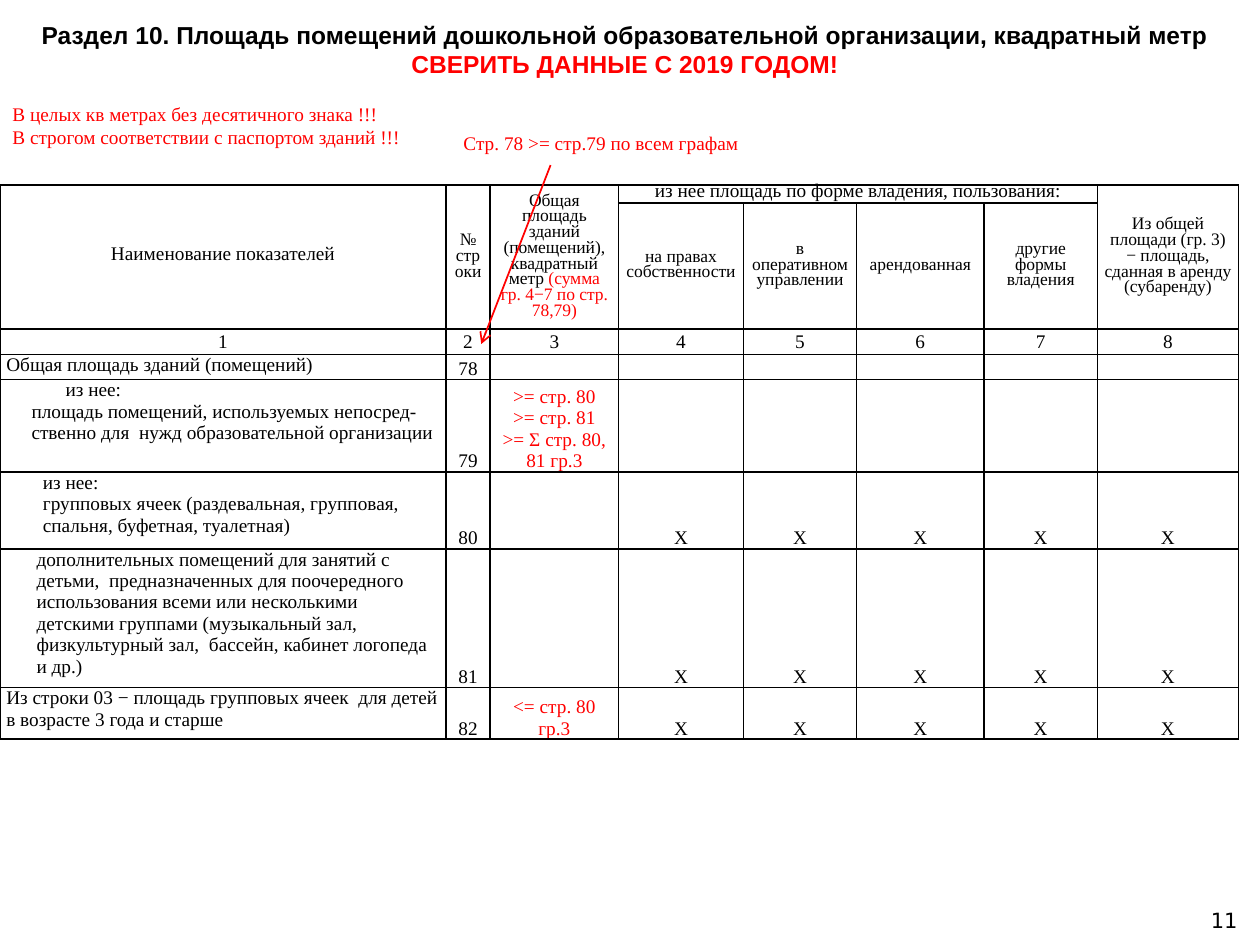
from lxml import etree
from pptx import Presentation, util as u
from pptx.dml.color import RGBColor
from pptx.enum import shapes, text
from pptx.oxml.ns import qn

WIDTH, HEIGHT = 10, 7.5
SERIF, BLACK, RED = "Times New Roman", "000000", "FF0000"
LEFT, CENTER, RIGHT = text.PP_ALIGN.LEFT, text.PP_ALIGN.CENTER, text.PP_ALIGN.RIGHT
TOP, MIDDLE, BOTTOM = (text.MSO_ANCHOR.TOP, text.MSO_ANCHOR.MIDDLE,
                       text.MSO_ANCHOR.BOTTOM)

COLUMNS = [3.54, 0.35, 1.02, 0.99, 0.9, 1.01, 0.9, 1.12]
ROWS = [0.14, 0.83, 0.2, 0.2, 0.61, 0.61, 1.02, 0.41]
# (row, column, rows spanned, columns spanned, size, black text, red text)
HEADINGS = [
    (0, 0, 2, 1, 11, "Наименование показателей", ""),
    (0, 1, 2, 1, 10, "№\vстроки", ""),
    (0, 2, 2, 1, 10, "Общая площадь зданий (помещений), квадратный метр ",
     "(сумма\vгр. 4−7 по стр. 78,79)"),
    (0, 3, 1, 4, 11, "из нее площадь по форме владения, пользования:", ""),
    (0, 7, 2, 1, 10,
     "Из общей площади (гр. 3) − площадь, сданная в аренду (субаренду)", ""),
    (1, 3, 1, 1, 10, "на правах собственности", ""),
    (1, 4, 1, 1, 10, "в оперативном управлении", ""),
    (1, 5, 1, 1, 10, "арендованная", ""),
    (1, 6, 1, 1, 10, "другие формы владения", ""),
]
# (name, left margin, first-line indent, line number, check, mark in columns 4-8)
INDICATORS = [
    (["Общая площадь зданий (помещений)"], 0, 0, "78", [""], ""),
    (["из нее:", "площадь помещений, используемых непосред-\vственно для  нужд "
      "образовательной организации"], 0.2, 0.27, "79",
     [">= стр. 80", ">= стр. 81", ">= Σ стр. 80, 81 гр.3"], ""),
    (["из нее:\vгрупповых ячеек (раздевальная, групповая, спальня, буфетная, "
      "туалетная)"], 0.29, 0, "80", [""], "Х"),
    (["дополнительных помещений для занятий с детьми,  предназначенных для "
      "поочередного использования всеми или несколькими детскими группами "
      "(музыкальный зал, физкультурный зал,  бассейн, кабинет логопеда и др.)"],
     0.24, 0, "81", [""], "Х"),
    (["Из строки 03 − площадь групповых ячеек  для детей в возрасте 3 года и "
      "старше"], 0, 0, "82", ["<= стр. 80 гр.3"], "Х"),
]


def color(value):
    return RGBColor.from_string(value)


def write(frame, lines, size=11, ink=BLACK, align=LEFT, face=SERIF, bold=False):
    """Put each line into its own paragraph and return the paragraphs."""
    frame.text = "\n".join(lines)
    for para in frame.paragraphs:
        para.alignment = align
        font = para.font
        font.name, font.size, font.bold = face, u.Pt(size), bold
        font.color.rgb = color(ink)
        if not para.runs:
            etree.SubElement(para._p, qn("a:endParaRPr"), sz=str(size * 100))
    return frame.paragraphs


def add_text(page, left, top, width, height, lines, anchor=TOP, wrap=True, **style):
    box = page.shapes.add_textbox(*map(u.Inches, (left, top, width, height)))
    frame = box.text_frame
    frame.word_wrap = wrap
    frame.vertical_anchor = anchor
    return write(frame, lines, **style)


def format_cell(cell):
    """Clear the fill, tighten the margins and draw thin black borders."""
    cell.margin_left = cell.margin_right = u.Inches(0.05)
    cell.margin_top = cell.margin_bottom = 0
    props = cell._tc.get_or_add_tcPr()
    for side in ("a:lnL", "a:lnR", "a:lnT", "a:lnB"):
        border = etree.SubElement(props, qn(side), w=str(u.Pt(1)))
        fill = etree.SubElement(border, qn("a:solidFill"))
        etree.SubElement(fill, qn("a:srgbClr"), val=BLACK)
    cell.fill.background()


def fill_cell(cell, lines, anchor=BOTTOM, align=CENTER, **style):
    cell.vertical_anchor = anchor
    return write(cell.text_frame, lines, align=align, **style)


def add_headings(table):
    for row, column, tall, wide, size, label, note in HEADINGS:
        cell = table.cell(row, column)
        if tall * wide > 1:
            cell.merge(table.cell(row + tall - 1, column + wide - 1))
        para = fill_cell(cell, [label], MIDDLE, size=size)[0]
        para.line_spacing = u.Pt(9)
        if note:
            before, after = note.split("\v")
            for index, part in enumerate((before, after)):
                if index:
                    para.add_line_break()
                span = para.add_run()
                span.text = part
                span.font.color.rgb = color(RED)
    for column in range(len(COLUMNS)):
        fill_cell(table.cell(2, column), [str(column + 1)], MIDDLE)


def add_indicators(table):
    for row, (name, margin, indent, number, check, mark) in enumerate(INDICATORS, 3):
        paras = fill_cell(table.cell(row, 0), name, TOP, LEFT)
        for para in paras:
            para._p.get_or_add_pPr().set("marL", str(u.Inches(margin)))
        paras[0]._p.get_or_add_pPr().set("indent", str(u.Inches(indent)))
        fill_cell(table.cell(row, 1), [number])
        fill_cell(table.cell(row, 2), check, ink=RED)
        for column in range(3, len(COLUMNS)):
            fill_cell(table.cell(row, column), [mark])


def add_area_table(page):
    area = (0, 1.47, sum(COLUMNS), sum(ROWS))
    table = page.shapes.add_table(len(ROWS), len(COLUMNS), *map(u.Inches, area)).table
    table.first_row = table.horz_banding = False
    for column, width in zip(table.columns, COLUMNS):
        column.width = u.Inches(width)
    for row, height in zip(table.rows, ROWS):
        row.height = u.Inches(height)
    for cell in table.iter_cells():
        format_cell(cell)
        write(cell.text_frame, [""], size=10)
    add_headings(table)
    add_indicators(table)


def add_arrow(page, *ends):
    arrow = page.shapes.add_connector(shapes.MSO_CONNECTOR.STRAIGHT,
                                      *map(u.Inches, ends))
    arrow.line.color.rgb = color(RED)
    arrow.line.width = u.Pt(1)
    etree.SubElement(arrow.line._get_or_add_ln(), qn("a:tailEnd"), type="arrow")
    etree.SubElement(arrow._element.spPr, qn("a:effectLst"))


def main():
    deck = Presentation()
    deck.slide_width, deck.slide_height = u.Inches(WIDTH), u.Inches(HEIGHT)
    page = deck.slides.add_slide(deck.slide_layouts[6])
    add_text(page, 7.59, 7.1, 2.33, 0.4, ["11"], MIDDLE,
             size=12, align=RIGHT, face="DejaVu Sans")
    add_area_table(page)
    title = add_text(
        page, 0.2, 0.11, 9.52, 0.72,
        ["Раздел 10. Площадь помещений дошкольной образовательной организации, "
         "квадратный метр", "СВЕРИТЬ ДАННЫЕ С 2019 ГОДОМ!"],
        wrap=False, size=14, align=CENTER, face="Arial", bold=True)
    title[1].font.color.rgb = color(RED)
    add_text(page, 0, 0.76, 3.39, 0.47,
             ["В целых кв метрах без десятичного знака !!!",
              "В строгом соответствии с паспортом зданий !!!"], ink=RED)
    add_text(page, 3.58, 0.99, 2.44, 0.29, ["Стр. 78 >= стр.79 по всем графам"],
             ink=RED)
    add_arrow(page, 4.37, 1.31, 3.82, 2.73)
    deck.save("out.pptx")


if __name__ == "__main__":
    main()
